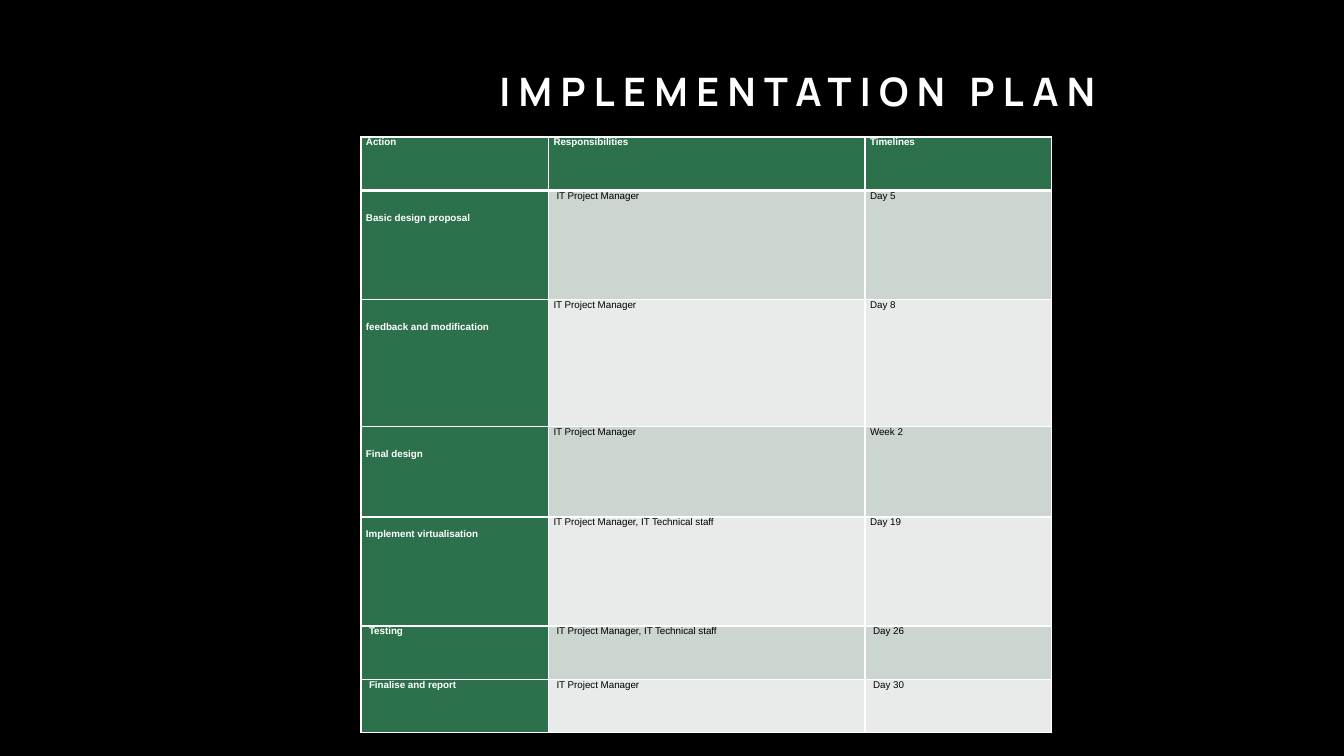
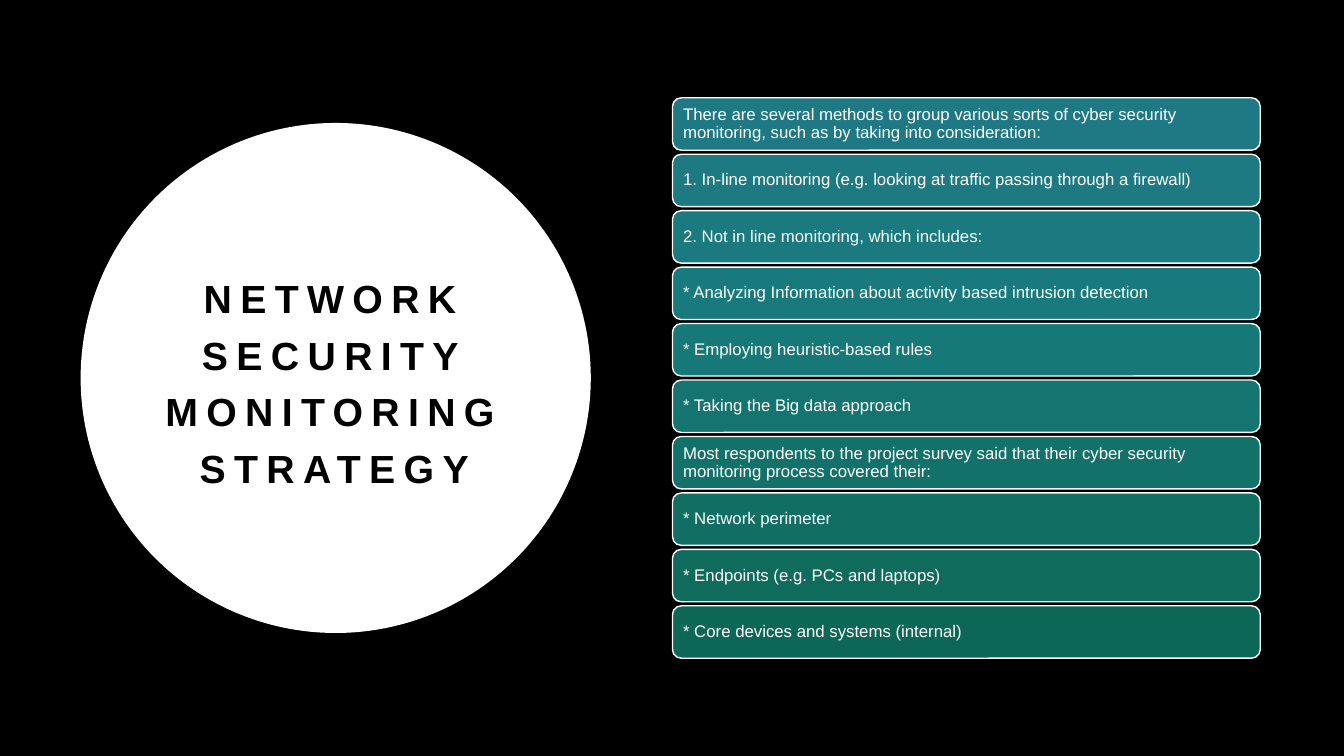
import dataclasses

import lxml.etree
import pptx
import pptx.dml.color
import pptx.enum.shapes
import pptx.enum.text
import pptx.oxml.ns
import pptx.util

Inches = pptx.util.Inches
Pt = pptx.util.Pt
qn = pptx.oxml.ns.qn
ANCHOR = pptx.enum.text.MSO_ANCHOR
ALIGN = pptx.enum.text.PP_ALIGN
SHAPE = pptx.enum.shapes.MSO_SHAPE


@dataclasses.dataclass(frozen=True)
class Theme:
    black: str = "000000"
    white: str = "FFFFFF"
    green: str = "2D714C"
    bands: tuple = ("CDD5D0", "E8EBE9")
    cards: tuple = ("1F7985", "1D7A82", "1A7A7F", "187A7C", "167977",
                    "147570", "12726A", "106E63", "0F6B5C", "0D6756")
    body_font: str = "Arial"
    display_font: str = "Manrope"
    title_size: int = 28
    title_spacing: int = 6
    card_size: int = 12
    table_size: int = 7


THEME = Theme()

COLUMN_WIDTHS = (1.86, 3.14, 1.85)
PLAN_HEADER = ("Action", "Responsibilities", "Timelines")
HEADER_HEIGHT = 0.53
LINE_HEIGHT = 0.11
CELL_INSET = 0.05
CELL_INDENT = 0.03
MANAGER = "IT Project Manager"
MANAGER_AND_STAFF = "IT Project Manager, IT Technical staff"


@dataclasses.dataclass(frozen=True)
class PlanRow:
    height: float
    cells: tuple
    lines_above: int = 0
    indented: tuple = ()


PLAN = (
    PlanRow(1.08, ("Basic design proposal", MANAGER, "Day 5"), 2, (1,)),
    PlanRow(1.26, ("feedback and modification", MANAGER, "Day 8"), 2),
    PlanRow(0.9, ("Final design", MANAGER, "Week 2"), 2),
    PlanRow(1.08, ("Implement virtualisation", MANAGER_AND_STAFF, "Day 19"), 1),
    PlanRow(0.53, ("Testing", MANAGER_AND_STAFF, "Day 26"), 0, (0, 1, 2)),
    PlanRow(0.53, ("Finalise and report", MANAGER, "Day 30"), 0, (0, 1, 2)),
)

MONITORING = (
    "There are several methods to group various sorts of cyber security "
    "monitoring, such as by taking into consideration:",
    "1. In-line monitoring (e.g. looking at traffic passing through a firewall)",
    "2. Not in line monitoring, which includes:",
    "* Analyzing Information about activity based intrusion detection",
    "* Employing heuristic-based rules",
    "* Taking the Big data approach",
    "Most respondents to the project survey said that their cyber security "
    "monitoring process covered their:",
    "* Network perimeter",
    "* Endpoints (e.g. PCs and laptops)",
    "* Core devices and systems (internal)",
)


def rgb(value):
    return pptx.dml.color.RGBColor.from_string(value)


def paint(target, color):
    target.fill.solid()
    target.fill.fore_color.rgb = rgb(color)


def style_font(p, size, color, name=THEME.body_font, bold=False):
    p.font.size = Pt(size)
    p.font.color.rgb = rgb(color)
    p.font.name = name
    p.font.bold = bold


def add_title(s, text, box, color, name, anchor):
    tf = s.shapes.add_textbox(*map(Inches, box)).text_frame
    tf.word_wrap = True
    tf.vertical_anchor = anchor
    p = tf.paragraphs[0]
    p.text = text
    p.alignment = ALIGN.CENTER
    p.line_spacing = 1.2
    style_font(p, THEME.title_size, color, name, bold=True)
    p._p.pPr.find(qn("a:defRPr")).set("spc", str(THEME.title_spacing * 100))


def add_shape(s, kind, box, color):
    sp = s.shapes.add_shape(kind, *map(Inches, box))
    sp.shadow.inherit = False
    paint(sp, color)
    return sp


def add_card(s, text, box, color):
    sp = add_shape(s, SHAPE.ROUNDED_RECTANGLE, box, color)
    sp.line.color.rgb = rgb(THEME.white)
    sp.line.width = Pt(1)
    tf = sp.text_frame
    tf.word_wrap = True
    tf.vertical_anchor = ANCHOR.MIDDLE
    tf.margin_left = tf.margin_right = Inches(0.08)
    tf.margin_top = tf.margin_bottom = Inches(0.05)
    p = tf.paragraphs[0]
    p.text = text
    p.alignment = ALIGN.LEFT
    p.line_spacing = 0.9
    style_font(p, THEME.card_size, THEME.white)


def set_borders(cell, top, bottom):
    tcPr = cell._tc.get_or_add_tcPr()
    widths = {"a:lnL": 1, "a:lnR": 1, "a:lnT": top, "a:lnB": bottom}
    for tag, width in widths.items():
        ln = lxml.etree.SubElement(tcPr, qn(tag), w=str(Pt(width)))
        fill = lxml.etree.SubElement(ln, qn("a:solidFill"))
        lxml.etree.SubElement(fill, qn("a:srgbClr"), val=THEME.white)


def fill_cell(cell, text, fill, strong, lines_above=0, indented=False):
    cell.margin_left = Inches(CELL_INSET + CELL_INDENT * indented)
    cell.margin_right = Inches(CELL_INSET)
    cell.margin_top = Inches(LINE_HEIGHT * lines_above)
    cell.margin_bottom = 0
    paint(cell, fill)
    p = cell.text_frame.paragraphs[0]
    p.text = text
    style_font(p, THEME.table_size, THEME.white if strong else THEME.black, bold=strong)


def add_plan_table(s, left, top):
    rows = (PlanRow(HEADER_HEIGHT, PLAN_HEADER),) + PLAN
    size = sum(COLUMN_WIDTHS), sum(row.height for row in rows)
    table = s.shapes.add_table(
        len(rows), len(COLUMN_WIDTHS), *map(Inches, (left, top) + size)).table
    table.first_row = table.horz_banding = False
    for column, width in zip(table.columns, COLUMN_WIDTHS):
        column.width = Inches(width)
    for i, row in enumerate(rows):
        table.rows[i].height = Inches(row.height)
        for j, text in enumerate(row.cells):
            cell = table.cell(i, j)
            strong = i == 0 or j == 0
            set_borders(cell, top=3 if i == 1 else 1, bottom=3 if i == 0 else 1)
            fill_cell(cell, text, THEME.green if strong else THEME.bands[(i - 1) % 2],
                      strong, row.lines_above if j == 0 else 0, j in row.indented)


def add_slide(prs):
    return prs.slides.add_slide(prs.slide_layouts[6])


def build_plan(prs):
    s = add_slide(prs)
    add_title(s, "IMPLEMENTATION PLAN", (2.86, 0.24, 10.1, 0.94),
              THEME.white, THEME.display_font, ANCHOR.BOTTOM)
    add_plan_table(s, 3.58, 1.36)


def build_monitoring(prs):
    s = add_slide(prs)
    circle = add_shape(s, SHAPE.OVAL, (0.8, 1.22, 5.06, 5.06), THEME.white)
    circle.line.fill.background()
    add_title(s, "NETWORK SECURITY MONITORING STRATEGY", (1.32, 2.5, 3.99, 2.5),
              THEME.black, THEME.body_font, ANCHOR.MIDDLE)
    for i, (text, color) in enumerate(zip(MONITORING, THEME.cards)):
        add_card(s, text, (6.67, 0.97 + 0.56 * i, 5.83, 0.52), color)


def main():
    prs = pptx.Presentation()
    prs.slide_width = Inches(13.33)
    prs.slide_height = Inches(7.5)
    paint(prs.slide_master.background, THEME.black)
    build_plan(prs)
    build_monitoring(prs)
    prs.save("out.pptx")


if __name__ == "__main__":
    main()
